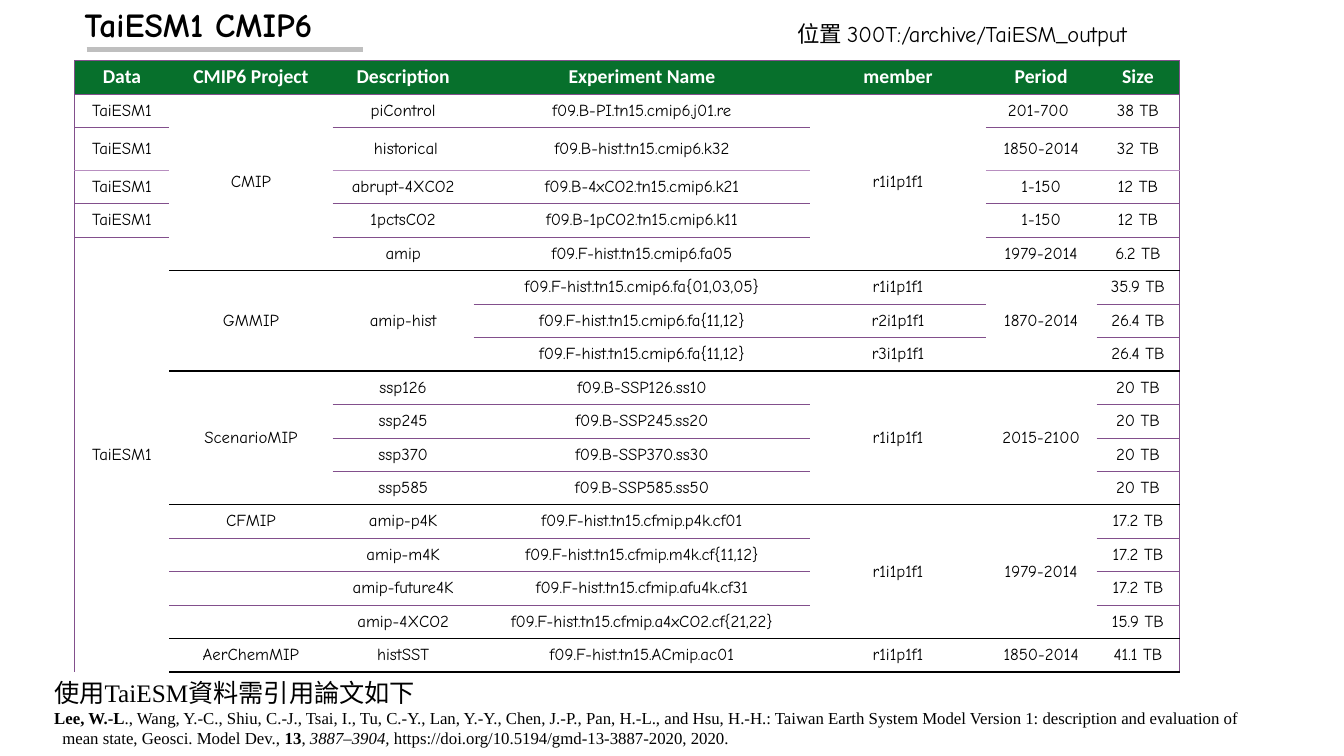
from lxml import etree
from pptx import Presentation
from pptx.dml.color import RGBColor
from pptx.enum.shapes import MSO_CONNECTOR
from pptx.enum.text import MSO_ANCHOR, PP_ALIGN
from pptx.oxml.ns import qn
from pptx.util import Inches, Pt

STRAIGHT = MSO_CONNECTOR.STRAIGHT
MIDDLE = MSO_ANCHOR.MIDDLE
LEFT, CENTER = PP_ALIGN.LEFT, PP_ALIGN.CENTER
BLACK = RGBColor(0x00, 0x00, 0x00)
WHITE = RGBColor(0xFF, 0xFF, 0xFF)
GREEN = RGBColor(0x07, 0x70, 0x2C)
GRAY = RGBColor(0xBF, 0xBF, 0xBF)
PURPLE = RGBColor(0x82, 0x4F, 0x8C)
LILAC = RGBColor(0xB8, 0x8F, 0xC0)
COMIC, PLAIN, SERIF = "Comic Neue", "Calibri", "Times New Roman"
WIDE, HIGH = Inches(13.33), Inches(7.5)
NO_STYLE = "{2D5ABB26-0587-4C30-8999-92F81FD0307C}"

THICK, THIN, SOFT = (BLACK, 1), (PURPLE, 0.5), (LILAC, 0.75)
COLS = [0.94, 1.62, 1.4, 3.34, 1.74, 1.1, 0.82]
TALL, TALL_SHARE = 2, 0.07
HEADS = ["Data", "CMIP6 Project", "Description", "Experiment Name",
         "member", "Period", "Size"]
GROUPS = [
    [("CMIP", "piControl", "f09.B-PI.tn15.cmip6.j01.re", "r1i1p1f1", "201-700 ", "38 TB"),
     (None, " historical", "f09.B-hist.tn15.cmip6.k32", None, "1850-2014", "32 TB"),
     (None, "abrupt-4XCO2", "f09.B-4xCO2.tn15.cmip6.k21", None, "1-150", "12 TB"),
     (None, "1pctsCO2", "f09.B-1pCO2.tn15.cmip6.k11", None, "1-150", "12 TB"),
     (None, "amip", "f09.F-hist.tn15.cmip6.fa05", None, "1979-2014", "6.2 TB")],
    [("GMMIP", "amip-hist", "f09.F-hist.tn15.cmip6.fa{01,03,05}", "r1i1p1f1", "1870-2014", "35.9 TB"),
     (None, None, "f09.F-hist.tn15.cmip6.fa{11,12}", "r2i1p1f1", None, "26.4 TB"),
     (None, None, "f09.F-hist.tn15.cmip6.fa{11,12}", "r3i1p1f1", None, "26.4 TB")],
    [("ScenarioMIP", "ssp126", "f09.B-SSP126.ss10", "r1i1p1f1", "2015-2100", "20 TB"),
     (None, "ssp245", "f09.B-SSP245.ss20", None, None, "20 TB"),
     (None, "ssp370", "f09.B-SSP370.ss30", None, None, "20 TB"),
     (None, "ssp585", "f09.B-SSP585.ss50", None, None, "20 TB")],
    [("CFMIP", "amip-p4K", "f09.F-hist.tn15.cfmip.p4k.cf01", "r1i1p1f1", "1979-2014", "17.2 TB"),
     ("", "amip-m4K", "f09.F-hist.tn15.cfmip.m4k.cf{11,12}", None, None, "17.2 TB"),
     ("", "amip-future4K", "f09.F-hist.tn15.cfmip.afu4k.cf31", None, None, "17.2 TB"),
     ("", "amip-4XCO2", "f09.F-hist.tn15.cfmip.a4xCO2.cf{21,22}", None, None, "15.9 TB")],
    [("AerChemMIP", "histSST", "f09.F-hist.tn15.ACmip.ac01", "r1i1p1f1", "1850-2014", "41.1 TB")],
]


def area(x, y, w, h):
    """Turn percentages of the slide into a box."""
    return (int(WIDE * x / 100), int(HIGH * y / 100),
            int(WIDE * w / 100), int(HIGH * h / 100))


def write(para, text, font=COMIC, size=12, color=BLACK, bold=False,
          italic=False, align=LEFT):
    """Add one formatted run to a paragraph."""
    para.alignment = align
    run = para.add_run()
    run.text = text
    face = run.font
    face.name, face.size, face.bold, face.italic = font, Pt(size), bold, italic
    face.color.rgb = color


def frame(slide, box):
    """Add a wrapping text box and return its text frame."""
    body = slide.shapes.add_textbox(*box).text_frame
    body.word_wrap = True
    return body


def title(slide, box):
    """Place the heading over its gray rule."""
    x, y, w, h = box
    level = int(y + h * 0.55)
    rule = slide.shapes.add_connector(
        STRAIGHT, int(x + w * 0.04), level, int(x + w * 0.96), level)
    rule.line.color.rgb = GRAY
    rule.line.width = Pt(3)
    etree.SubElement(rule._element.spPr, qn("a:effectLst"))
    write(frame(slide, box).paragraphs[0], "TaiESM1 CMIP6", size=24, bold=True)


def place(slide, box):
    """State where the data is stored."""
    para = frame(slide, box).paragraphs[0]
    write(para, "位置 ", font=PLAIN, size=16)
    write(para, "300T:/archive/TaiESM_output", size=16)


def edge(cell, **sides):
    """Draw the given sides of a cell and clear the others."""
    props = cell._tc.get_or_add_tcPr()
    for spot, side in enumerate("LRTB"):
        line = etree.Element(qn("a:ln" + side))
        if sides.get(side):
            color, width = sides[side]
            line.set("w", str(Pt(width)))
            fill = etree.SubElement(line, qn("a:solidFill"))
            etree.SubElement(fill, qn("a:srgbClr"), val=str(color))
        else:
            line.set("w", "0")
            etree.SubElement(line, qn("a:noFill"))
        props.insert(spot, line)


def fill_cell(cell, text, head):
    """Set the text, fill and margins of a cell."""
    cell.vertical_anchor = MIDDLE
    cell.margin_top = cell.margin_bottom = Inches(0.02)
    para = cell.text_frame.paragraphs[0]
    if head:
        cell.fill.solid()
        cell.fill.fore_color.rgb = GREEN
        write(para, text, font=PLAIN, size=14, color=WHITE, bold=True, align=CENTER)
        return
    cell.fill.background()
    if text:
        write(para, text, align=CENTER)
    else:
        etree.SubElement(para._p, qn("a:endParaRPr"), sz="1200")


def grid(slide, box):
    """Build the table of experiments."""
    rows, rules = [HEADS], [THIN, THIN]
    for group in GROUPS:
        rows += [(None if len(rows) > 1 else "TaiESM1",) + row for row in group]
        rules += [THIN] * (len(group) - 1) + [THICK]
    rules[TALL + 1] = SOFT
    count, wide = len(rows), len(COLS)
    table = slide.shapes.add_table(count, wide, *box).table
    table.first_row = table.horz_banding = False
    table._tbl.tblPr.find(qn("a:tableStyleId")).text = NO_STYLE
    for col, part in zip(table.columns, COLS):
        col.width = int(box[2] * part / sum(COLS))
    for r, row in enumerate(table.rows):
        share = TALL_SHARE if r == TALL else (1 - TALL_SHARE) / (count - 1)
        row.height = int(box[3] * share)
    for r, row in enumerate(rows):
        for c, text in enumerate(row):
            cell = table.cell(r, c)
            fill_cell(cell, text, r == 0)
            joined = r + 1 < count and rows[r + 1][c] is None
            edge(cell,
                 L=THIN if c == 0 else None,
                 R=THIN if c == wide - 1 else None,
                 T=None if text is None else rules[r],
                 B=None if joined else rules[r + 1])
    for c in range(wide):
        starts = [r for r in range(count) if rows[r][c] is not None]
        for top, after in zip(starts, starts[1:] + [count]):
            if after - top > 1:
                table.cell(top, c).merge(table.cell(after - 1, c))


def cite(slide, box):
    """Give the paper to be cited."""
    body = frame(slide, box)
    write(body.paragraphs[0], "使用TaiESM資料需引用論文如下", font=SERIF, size=18)
    para = body.add_paragraph()
    write(para, "Lee, W.-L", font=SERIF, bold=True)
    write(para, "., Wang, Y.-C., Shiu, C.-J., Tsai, I., Tu, C.-Y., Lan, Y.-Y., "
          "Chen, J.-P., Pan, H.-L., and Hsu, H.-H.: Taiwan Earth System Model "
          "Version 1: description and evaluation of", font=SERIF)
    para = body.add_paragraph()
    para._p.get_or_add_pPr().set("marL", str(Inches(0.08)))
    write(para, "mean state, Geosci. Model Dev., ", font=SERIF)
    write(para, "13", font=SERIF, bold=True)
    write(para, ", ", font=SERIF)
    write(para, "3887–3904,", font=SERIF, italic=True)
    write(para, " https://doi.org/10.5194/gmd-13-3887-2020, 2020.", font=SERIF)


def main():
    """Build and save the slide."""
    deck = Presentation()
    deck.slide_width, deck.slide_height = WIDE, HIGH
    slide = deck.slides.add_slide(deck.slide_layouts[6])
    title(slide, area(5.55, -0.13, 22.36, 12.13))
    grid(slide, area(5.55, 8, 82.2, 80.93))
    place(slide, area(58.59, 2, 29.86, 4.93))
    cite(slide, area(3.3, 88.93, 90.47, 14.8))
    deck.save("out.pptx")


if __name__ == "__main__":
    main()
